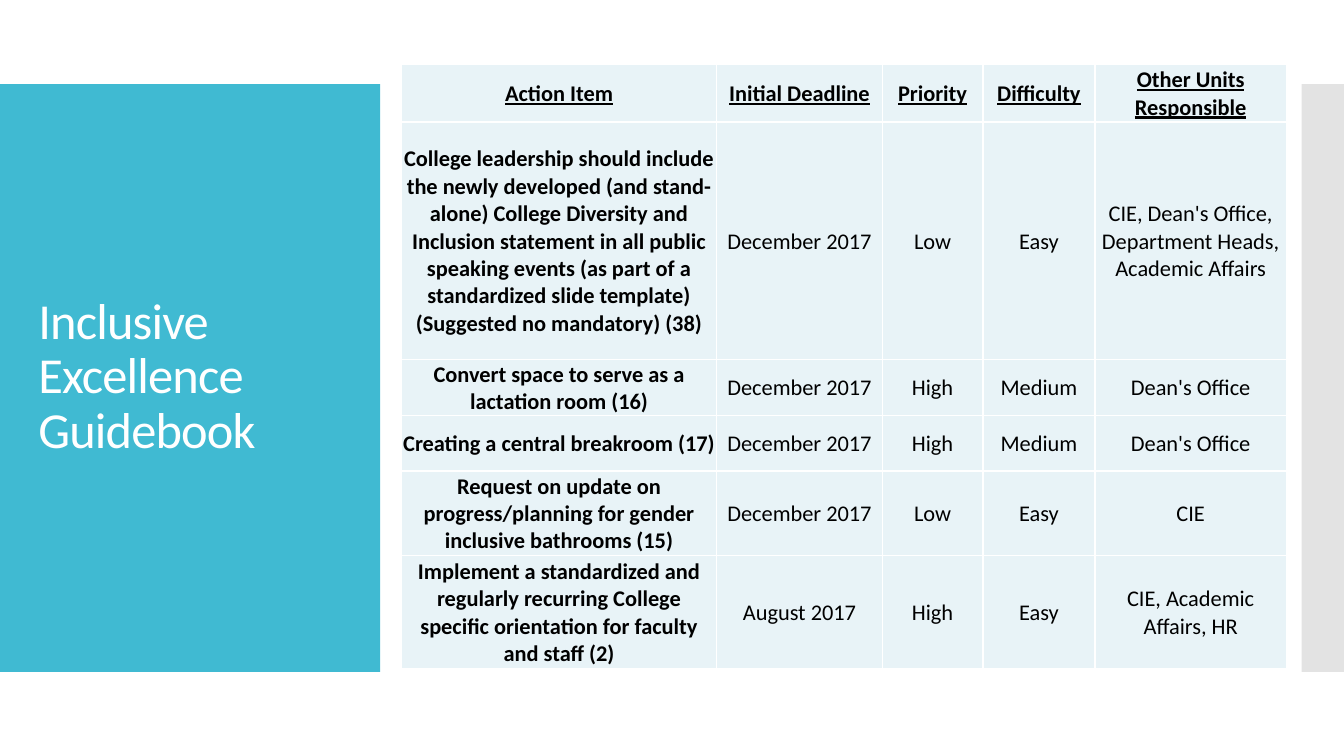
import pptx
import pptx.dml.color
import pptx.enum.shapes
import pptx.enum.text
import pptx.oxml
import pptx.oxml.ns
import pptx.util

HEADING = "Inclusive Excellence Guidebook"
HEADERS = ["Action Item", "Initial Deadline", "Priority", "Difficulty", "Other Units Responsible"]
ACTIONS = [
    ("College leadership should include the newly developed (and stand-alone) College Diversity "
     "and Inclusion statement in all public speaking events (as part of a standardized slide "
     "template) (Suggested no mandatory) (38)",
     "December 2017", "Low", "Easy", "CIE, Dean's Office, Department Heads, Academic Affairs"),
    ("Convert space to serve as a lactation room (16)",
     "December 2017", "High", "Medium", "Dean's Office"),
    ("Creating a central breakroom (17)",
     "December 2017", "High", "Medium", "Dean's Office"),
    ("Request on update on progress/planning for gender inclusive bathrooms (15)",
     "December 2017", "Low", "Easy", "CIE"),
    ("Implement a standardized and regularly recurring College specific orientation for faculty "
     "and staff (2)",
     "August 2017", "High", "Easy", "CIE, Academic Affairs, HR"),
]
COLORS = {"heading panel": "40BAD2", "edge panel": "C8C8C8", "cell": "E8F3F7",
          "border": "FFFFFF", "heading": "FFFFFF", "text": "000000"}
FONT = "Calibri"
WIDTH, HEIGHT = 13.33, 7.5
PANEL_TOP, PANEL_HEIGHT = HEIGHT / 9, HEIGHT * 7 / 9
HEADING_PANEL_WIDTH, EDGE_PANEL_WIDTH = 3.77, 0.42
TABLE_LEFT, TABLE_TOP = 3.98, 0.64
COLUMNS = [3.13, 1.64, 1, 1.11, 1.9]
ROWS = [0.57, 2.36, 0.55, 0.55, 0.84, 1.12]

inch = pptx.util.Inches


def color(name):
    return pptx.dml.color.RGBColor.from_string(COLORS[name])


def write(frame, text, size, color_name):
    frame.vertical_anchor = pptx.enum.text.MSO_ANCHOR.MIDDLE
    frame.word_wrap = True
    run = frame.paragraphs[0].add_run()
    run.text = text
    run.font.name, run.font.size = FONT, pptx.util.Pt(size)
    run.font.color.rgb = color(color_name)
    return run


def add_panel(slide, left, width, name):
    panel = slide.shapes.add_shape(pptx.enum.shapes.MSO_SHAPE.RECTANGLE, inch(left),
                                   inch(PANEL_TOP), inch(width), inch(PANEL_HEIGHT))
    panel.shadow.inherit = False
    panel.fill.solid()
    panel.fill.fore_color.rgb = color(name)
    panel.line.fill.background()
    slide.shapes.title._element.addprevious(panel._element)
    return panel


def add_heading(slide):
    heading = slide.shapes.title
    heading.left, heading.top = inch(0.28), inch(1.23)
    heading.width, heading.height = inch(3.22), inch(5.03)
    run = write(heading.text_frame, HEADING, 36, "heading")
    run._r.get_or_add_rPr().set("spc", "-60")
    paragraph = heading.text_frame.paragraphs[0]
    paragraph.alignment = pptx.enum.text.PP_ALIGN.LEFT
    paragraph.line_spacing = 0.9


def fill_cell(cell, text, is_header, is_action):
    cell.margin_left = cell.margin_top = cell.margin_right = inch(0.01)
    cell.margin_bottom = 0
    cell.vertical_anchor = pptx.enum.text.MSO_ANCHOR.MIDDLE
    run = write_cell_text(cell, text)
    run.font.bold = is_header or is_action
    run.font.underline = is_header
    properties = cell._tc.get_or_add_tcPr()
    for side in ("lnL", "lnR", "lnT", "lnB"):
        properties.append(pptx.oxml.parse_xml(
            f'<a:{side} {pptx.oxml.ns.nsdecls("a")} w="12700"><a:solidFill>'
            f'<a:srgbClr val="{COLORS["border"]}"/></a:solidFill></a:{side}>'))
    cell.fill.solid()
    cell.fill.fore_color.rgb = color("cell")


def write_cell_text(cell, text):
    paragraph = cell.text_frame.paragraphs[0]
    paragraph.alignment = pptx.enum.text.PP_ALIGN.CENTER
    run = paragraph.add_run()
    run.text = text
    run.font.name, run.font.size = FONT, pptx.util.Pt(16)
    run.font.color.rgb = color("text")
    return run


def add_actions(slide):
    table = slide.shapes.add_table(len(ROWS), len(COLUMNS), inch(TABLE_LEFT), inch(TABLE_TOP),
                                   inch(sum(COLUMNS)), inch(sum(ROWS))).table
    table.horz_banding = False
    for column, width in zip(table.columns, COLUMNS):
        column.width = inch(width)
    for row, height in zip(table.rows, ROWS):
        row.height = inch(height)
    for r, texts in enumerate([HEADERS, *ACTIONS]):
        for c, text in enumerate(texts):
            fill_cell(table.cell(r, c), text, r == 0, c == 0)


def main():
    deck = pptx.Presentation()
    deck.slide_width, deck.slide_height = inch(WIDTH), inch(HEIGHT)
    slide = deck.slides.add_slide(deck.slide_layouts[5])
    add_panel(slide, 0, HEADING_PANEL_WIDTH, "heading panel")
    edge = add_panel(slide, WIDTH - EDGE_PANEL_WIDTH, EDGE_PANEL_WIDTH, "edge panel")
    tint = edge._element.spPr.find(".//" + pptx.oxml.ns.qn("a:srgbClr"))
    tint.append(pptx.oxml.parse_xml(f'<a:alpha {pptx.oxml.ns.nsdecls("a")} val="50000"/>'))
    add_heading(slide)
    add_actions(slide)
    deck.save("out.pptx")


if __name__ == "__main__":
    main()
